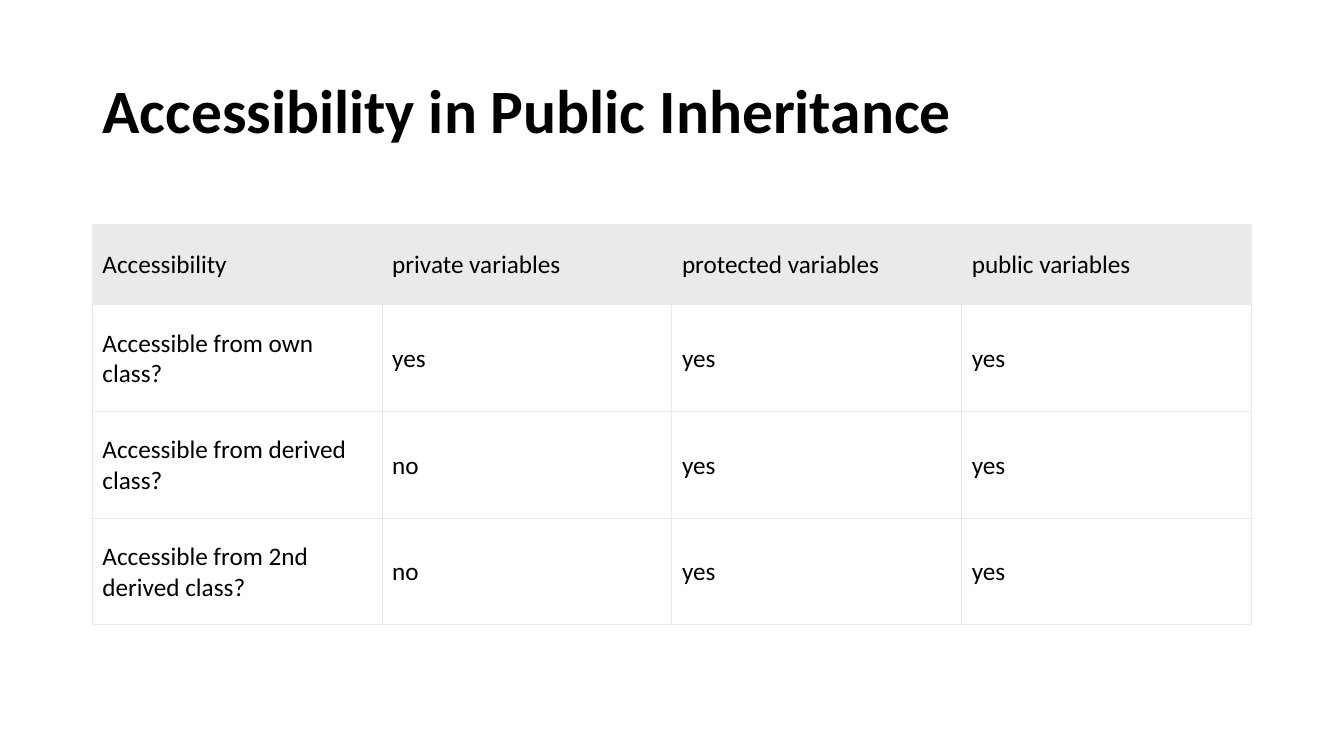
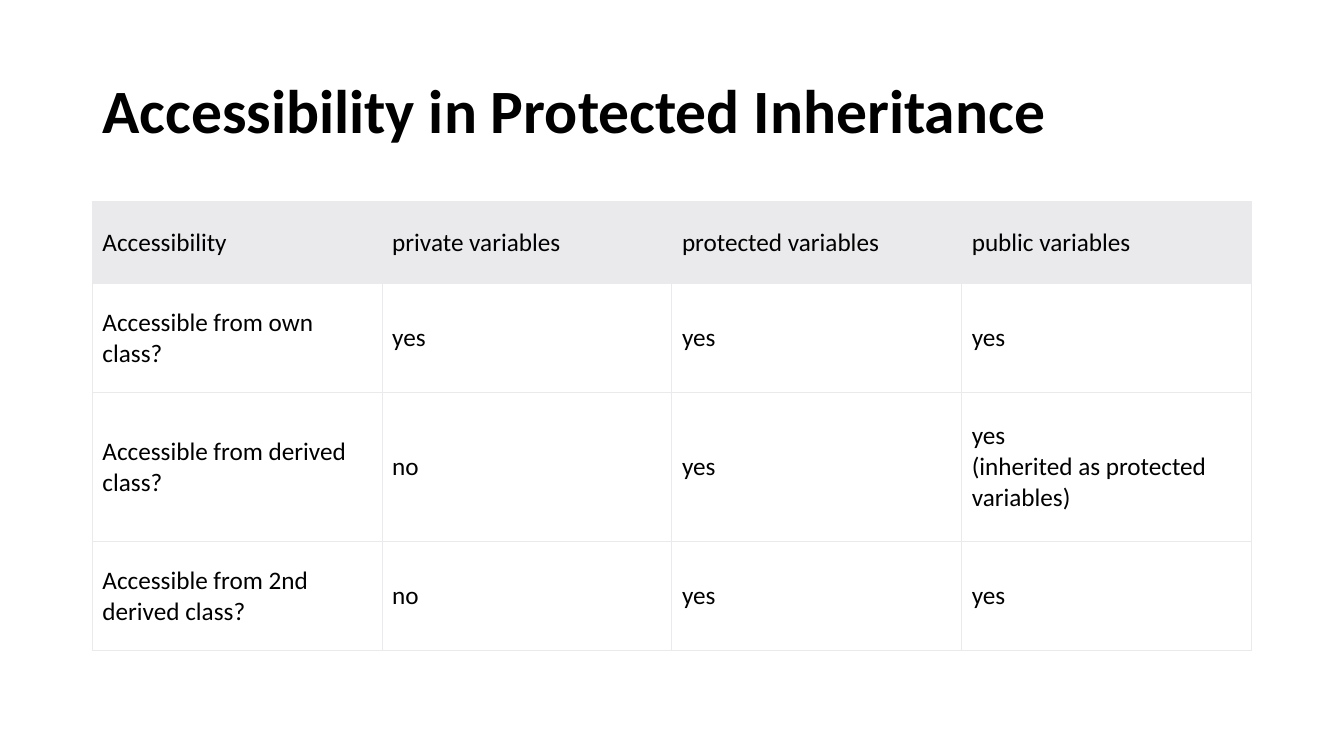
import lxml.etree
import pptx
import pptx.dml.color
import pptx.enum.text
import pptx.oxml.ns
import pptx.util

Pt = pptx.util.Pt

HEADINGS = ("Accessibility", "private variables", "protected variables", "public variables")
OWN = "Accessible from own class?"
DERIVED = "Accessible from derived class?"
SECOND = "Accessible from 2nd derived class?"
SLIDES = [
    {
        "title": "Accessibility in Public Inheritance",
        "top": 160.4,
        "heights": (57.4, 76.2, 76.2, 76.2),
        "rows": [
            HEADINGS,
            (OWN, "yes", "yes", "yes"),
            (DERIVED, "no", "yes", "yes"),
            (SECOND, "no", "yes", "yes"),
        ],
    },
    {
        "title": "Accessibility in Protected Inheritance",
        "top": 144,
        "heights": (58.2, 77.8, 106.6, 77.8),
        "rows": [
            HEADINGS,
            (OWN, "yes", "yes", "yes"),
            (DERIVED, "no", "yes", "yes\n(inherited as protected variables)"),
            (SECOND, "no", "yes", "yes"),
        ],
    },
]

FONT = "Calibri"
BLACK, WHITE, GREY = "000000", "FFFFFF", "EAEAEC"
LEFT, WIDTH = 66, 828
TITLE_TOP, TITLE_HEIGHT = 28.8, 104.4
HEADER_MARGINS = (7.2, 11.5, 5.8, 10.8)
BODY_MARGINS = (7.2, 7.2, 5.8, 6.5)


def color(value):
    return pptx.dml.color.RGBColor.from_string(value)


def write(para, text, size, bold=False):
    for number, line in enumerate(text.split("\n")):
        if number:
            para.add_line_break()
        span = para.add_run()
        span.text = line
        span.font.name = FONT
        span.font.size = Pt(size)
        span.font.bold = bold
        span.font.color.rgb = color(BLACK)


def add_title(page, text):
    box = page.shapes.title
    box.left, box.top = Pt(LEFT), Pt(TITLE_TOP)
    box.width, box.height = Pt(WIDTH), Pt(TITLE_HEIGHT)
    frame = box.text_frame
    frame.auto_size = pptx.enum.text.MSO_AUTO_SIZE.NONE
    frame.vertical_anchor = pptx.enum.text.MSO_ANCHOR.MIDDLE
    para = frame.paragraphs[0]
    para.alignment = pptx.enum.text.PP_ALIGN.LEFT
    para.line_spacing = 0.9
    write(para, text, 44, bold=True)


def add_borders(cell):
    properties = cell._tc.get_or_add_tcPr()
    qn = pptx.oxml.ns.qn
    for side in ("lnL", "lnR", "lnT", "lnB"):
        line = lxml.etree.SubElement(properties, qn("a:" + side), w=str(Pt(0.75)))
        fill = lxml.etree.SubElement(line, qn("a:solidFill"))
        lxml.etree.SubElement(fill, qn("a:srgbClr"), val=GREY)


def format_cell(cell, text, is_header):
    add_borders(cell)
    cell.fill.solid()
    cell.fill.fore_color.rgb = color(GREY if is_header else WHITE)
    margins = HEADER_MARGINS if is_header else BODY_MARGINS
    cell.margin_left, cell.margin_top, cell.margin_right, cell.margin_bottom = map(Pt, margins)
    cell.vertical_anchor = pptx.enum.text.MSO_ANCHOR.MIDDLE
    write(cell.text_frame.paragraphs[0], text, 18)


def add_grid(page, rows, top, heights):
    count = len(HEADINGS)
    table = page.shapes.add_table(
        len(rows), count, Pt(LEFT), Pt(top), Pt(WIDTH), Pt(sum(heights))
    ).table
    table.horz_banding = False
    for column in table.columns:
        column.width = Pt(WIDTH / count)
    for row_number, (texts, height) in enumerate(zip(rows, heights)):
        table.rows[row_number].height = Pt(height)
        for column_number, text in enumerate(texts):
            format_cell(table.cell(row_number, column_number), text, row_number == 0)


def main():
    deck = pptx.Presentation()
    deck.slide_width, deck.slide_height = Pt(960), Pt(540)
    for content in SLIDES:
        page = deck.slides.add_slide(deck.slide_layouts[5])
        add_title(page, content["title"])
        add_grid(page, content["rows"], content["top"], content["heights"])
    deck.save("out.pptx")


if __name__ == "__main__":
    main()
